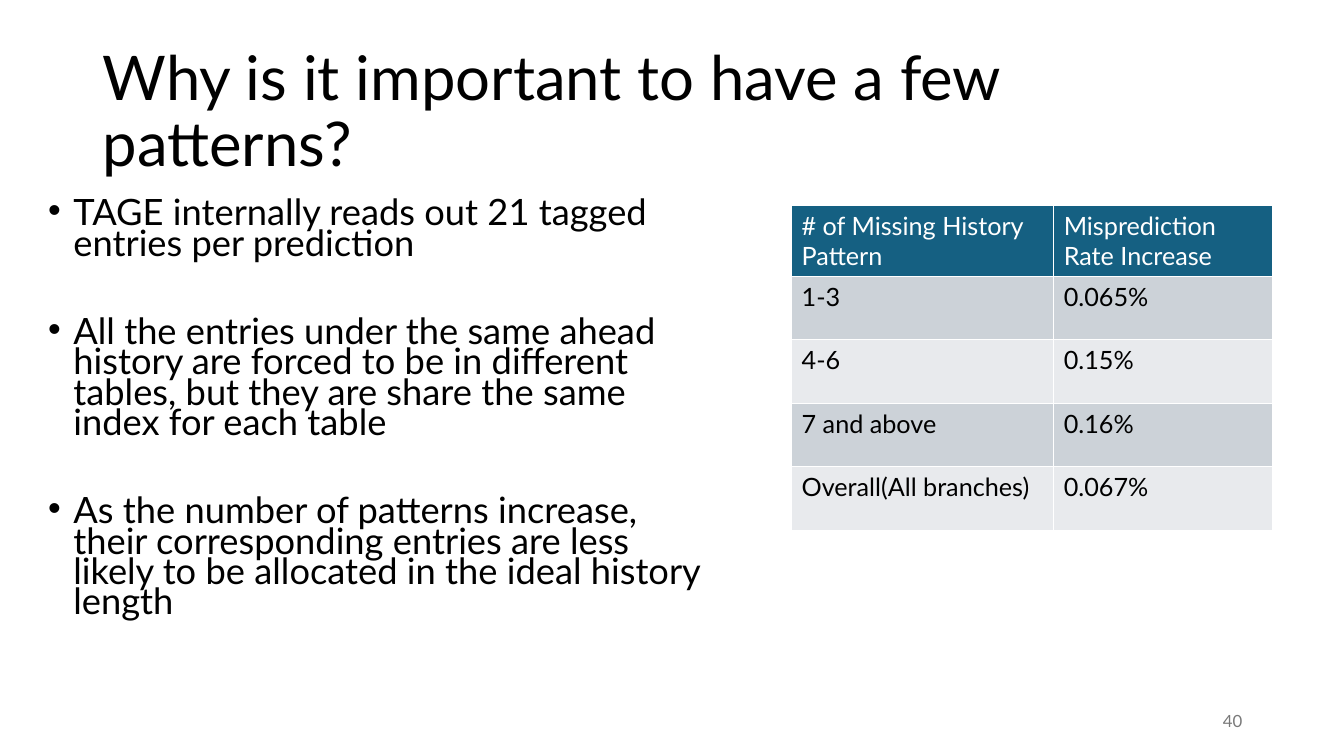
from lxml import etree
from pptx import Presentation
from pptx.dml.color import RGBColor
from pptx.enum.text import MSO_ANCHOR, PP_ALIGN
from pptx.oxml.ns import qn
from pptx.util import Inches, Pt

TOP, MIDDLE = MSO_ANCHOR.TOP, MSO_ANCHOR.MIDDLE
LEFT, RIGHT = PP_ALIGN.LEFT, PP_ALIGN.RIGHT
WIDE, HIGH = Inches(13.33), Inches(7.5)
FONT = "Lato"
COLORS = {"text": "000000", "white": "FFFFFF", "head": "156082",
          "dark": "CCD2D8", "light": "E8EAED", "gray": "797979"}

TITLE = "Why is it important to have a few patterns?"
POINTS = [
    "TAGE internally reads out 21 tagged entries per prediction",
    "All the entries under the same ahead history are forced to be in "
    "different tables, but they are share the same index for each table",
    "As the number of patterns increase, their corresponding entries are "
    "less likely to be allocated in the ideal history length",
]
RATES = [
    ("# of Missing History Pattern", "Misprediction Rate Increase"),
    ("1-3", "0.065%"),
    ("4-6", "0.15%"),
    ("7 and above", "0.16%"),
    ("Overall(All branches)", "0.067%"),
]


# Lengths are percentages of the slide's width and height
def across(share):
    return round(WIDE * share / 100)


def down(share):
    return round(HIGH * share / 100)


def color(name):
    return RGBColor.from_string(COLORS[name])


def style(para, size, ink):
    for run in para.runs:
        run.font.name = FONT
        run.font.size = Pt(size)
        run.font.color.rgb = color(ink)


def add_text(slide, area, lines, size, ink="text", anchor=TOP,
             align=LEFT, pitch=1.0, gap=0, bullet=False):
    left, top, width, height = area
    box = slide.shapes.add_textbox(across(left), down(top),
                                   across(width), down(height))
    frame = box.text_frame
    frame.word_wrap = True
    frame.vertical_anchor = anchor
    for i, line in enumerate(lines):
        para = frame.add_paragraph() if i else frame.paragraphs[0]
        para.text = line
        para.alignment = align
        para.line_spacing = pitch
        if i:
            para.space_before = Pt(gap)
        if bullet:
            add_bullet(para)
        style(para, size, ink)


def add_bullet(para):
    props = para._p.get_or_add_pPr()
    props.set("marL", str(Inches(0.25)))
    props.set("indent", str(-Inches(0.25)))
    etree.SubElement(props, qn("a:buFont"), typeface="Arial")
    etree.SubElement(props, qn("a:buChar"), char="•")


def add_edges(cell):
    props = cell._tc.get_or_add_tcPr()
    for i, side in enumerate(("lnL", "lnR", "lnT", "lnB")):
        edge = etree.Element(qn("a:" + side), w=str(Pt(1)))
        fill = etree.SubElement(edge, qn("a:solidFill"))
        etree.SubElement(fill, qn("a:srgbClr"), val=COLORS["white"])
        props.insert(i, edge)


def add_table(slide, left, top, widths, heights, rows):
    shape = slide.shapes.add_table(
        len(rows), len(widths), across(left), down(top),
        across(sum(widths)), down(sum(heights)))
    table = shape.table
    for col, width in zip(table.columns, widths):
        col.width = across(width)
    for i, (row, height, words) in enumerate(zip(table.rows, heights, rows)):
        row.height = down(height)
        band = "head" if i == 0 else "dark" if i % 2 else "light"
        for cell, word in zip(row.cells, words):
            cell.text_frame.text = word
            style(cell.text_frame.paragraphs[0], 18,
                  "text" if i else "white")
            cell.fill.solid()
            cell.fill.fore_color.rgb = color(band)
            add_edges(cell)


def main():
    deck = Presentation()
    deck.slide_width, deck.slide_height = WIDE, HIGH
    slide = deck.slides.add_slide(deck.slide_layouts[6])

    # Title and points
    add_text(slide, (6.9, 5.33, 86.25, 19.33), [TITLE], 44,
             anchor=MIDDLE, pitch=0.9)
    add_text(slide, (2.85, 26, 50.6, 63.5), POINTS, 25.9,
             pitch=0.7, gap=41, bullet=True)

    # Misprediction rates
    add_table(slide, 58.9, 27.2, [19.5, 16.28], [9.33] + [8.4] * 4, RATES)

    # Page number
    add_text(slide, (70.67, 92.67, 22.5, 5.33), ["40"], 12, "gray",
             anchor=MIDDLE, align=RIGHT)
    deck.save("out.pptx")


if __name__ == "__main__":
    main()
